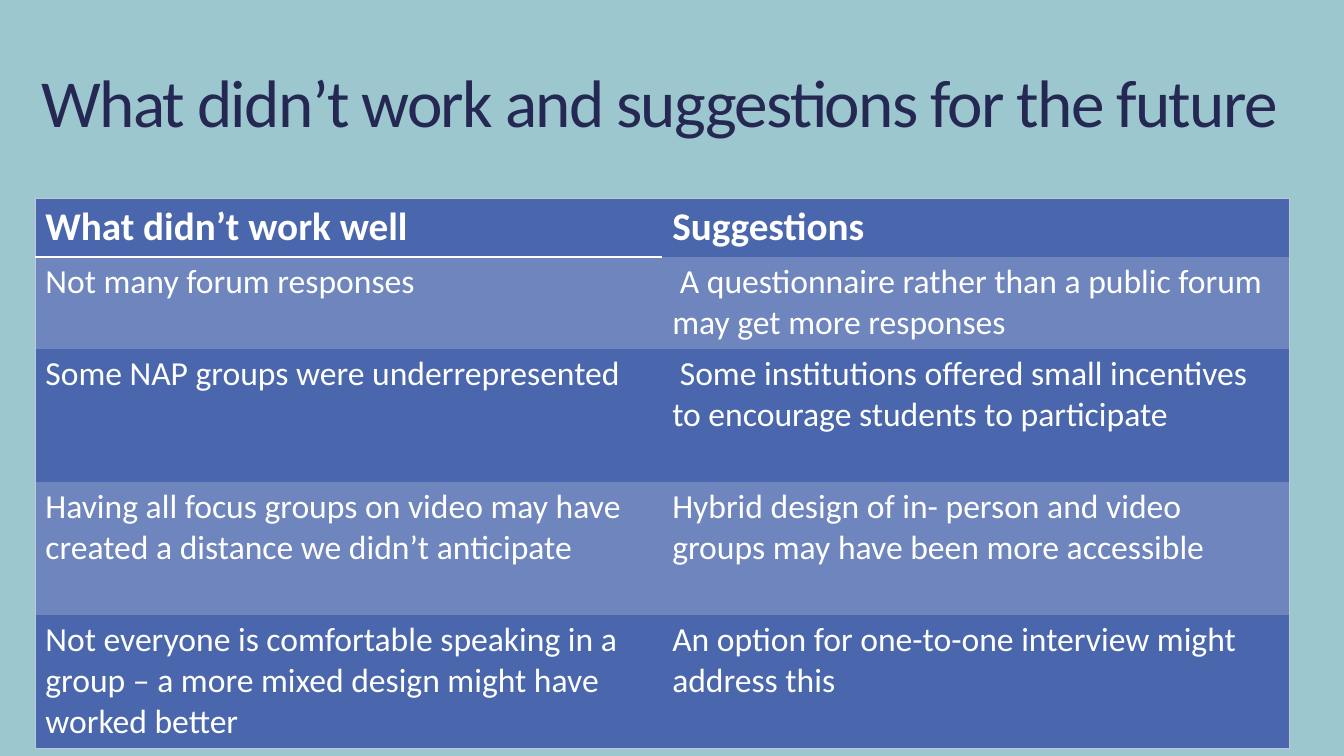
from lxml.etree import SubElement
from pptx import Presentation
from pptx.dml.color import RGBColor as RGB
from pptx.enum.text import MSO_ANCHOR as Anchor, MSO_AUTO_SIZE as AutoSize, PP_ALIGN as Align
from pptx.oxml.ns import qn
from pptx.util import Pt

COLORS = {
    "background": "9CC7CE",
    "title": "242852",
    "row": "4A66AC",
    "band": "6E85BD",
    "frame": "C1C6DB",
    "text": "FFFFFF",
}
HEADINGS = ("What didn’t work well", "Suggestions")
FINDINGS = [
    ("Not many forum responses",
     " A questionnaire rather than a public forum may get more responses"),
    ("Some NAP groups were underrepresented",
     " Some institutions offered small incentives to encourage students to participate"),
    ("Having all focus groups on video may have created a distance we didn’t anticipate",
     "Hybrid design of in- person and video groups may have been more accessible"),
    ("Not everyone is comfortable speaking in a group – a more mixed design might have worked better",
     "An option for one-to-one interview might address this"),
]
ROW_HEIGHTS = (41.5, 66, 95, 95, 95)


class SlideBuilder:
    def __init__(self, presentation, font="Calibri"):
        self.font = font
        self.slide = presentation.slides.add_slide(presentation.slide_layouts[5])
        fill = self.slide.background.fill
        fill.solid()
        fill.fore_color.rgb = RGB.from_string(COLORS["background"])

    def style(self, paragraph, size, color, bold=False):
        for run in paragraph.runs:
            run.font.name = self.font
            run.font.size = Pt(size)
            run.font.bold = bold
            run.font.color.rgb = RGB.from_string(COLORS[color])

    def title(self, text, left, top, width, height):
        heading = self.slide.shapes.title
        heading.left, heading.top = Pt(left), Pt(top)
        heading.width, heading.height = Pt(width), Pt(height)
        frame = heading.text_frame
        frame.text = text
        frame.word_wrap = True
        frame.auto_size = AutoSize.NONE
        frame.vertical_anchor = Anchor.MIDDLE
        line = frame.paragraphs[0]
        line.alignment = Align.LEFT
        line.line_spacing = 0.85
        self.style(line, 48, "title")
        line.runs[0].font._element.set("spc", "-120")

    def borders(self, cell, edges):
        """Draw the edges given as {side: (color, width)} and clear the others."""
        properties = cell._tc.get_or_add_tcPr()
        for side in "LRTB":
            line = SubElement(properties, qn(f"a:ln{side}"))
            if side in edges:
                color, width = edges[side]
                line.set("w", str(Pt(width)))
                fill = SubElement(line, qn("a:solidFill"))
                SubElement(fill, qn("a:srgbClr")).set("val", COLORS[color])
            else:
                SubElement(line, qn("a:noFill"))

    def table(self, rows, heights, left, top, width):
        columns = len(rows[0])
        grid = self.slide.shapes.add_table(
            len(rows), columns, Pt(left), Pt(top), Pt(width), Pt(sum(heights))).table
        grid.horz_banding = False
        for column in grid.columns:
            column.width = Pt(width / columns)
        outline = ("frame", 0.75)
        rule = ("text", 1.5)
        for r, texts in enumerate(rows):
            grid.rows[r].height = Pt(heights[r])
            for c, text in enumerate(texts):
                on_edge = {"L": c == 0, "R": c == columns - 1,
                           "T": r == 0, "B": r == len(rows) - 1}
                edges = {side: outline for side, outer in on_edge.items() if outer}
                if c == 0 and r < 2:
                    edges["B" if r == 0 else "T"] = rule
                cell = grid.cell(r, c)
                self.borders(cell, edges)
                cell.fill.solid()
                cell.fill.fore_color.rgb = RGB.from_string(COLORS["band" if r % 2 else "row"])
                cell.text_frame.text = text
                self.style(cell.text_frame.paragraphs[0], 24 if r else 28, "text", bold=r == 0)


def main():
    presentation = Presentation()
    presentation.slide_width, presentation.slide_height = Pt(960), Pt(540)
    builder = SlideBuilder(presentation)
    builder.title("What didn’t work and suggestions for the future", 22.3, 11.5, 915, 130.3)
    builder.table([HEADINGS, *FINDINGS], ROW_HEIGHTS, 25.2, 141.8, 895.6)
    presentation.save("out.pptx")


if __name__ == "__main__":
    main()
